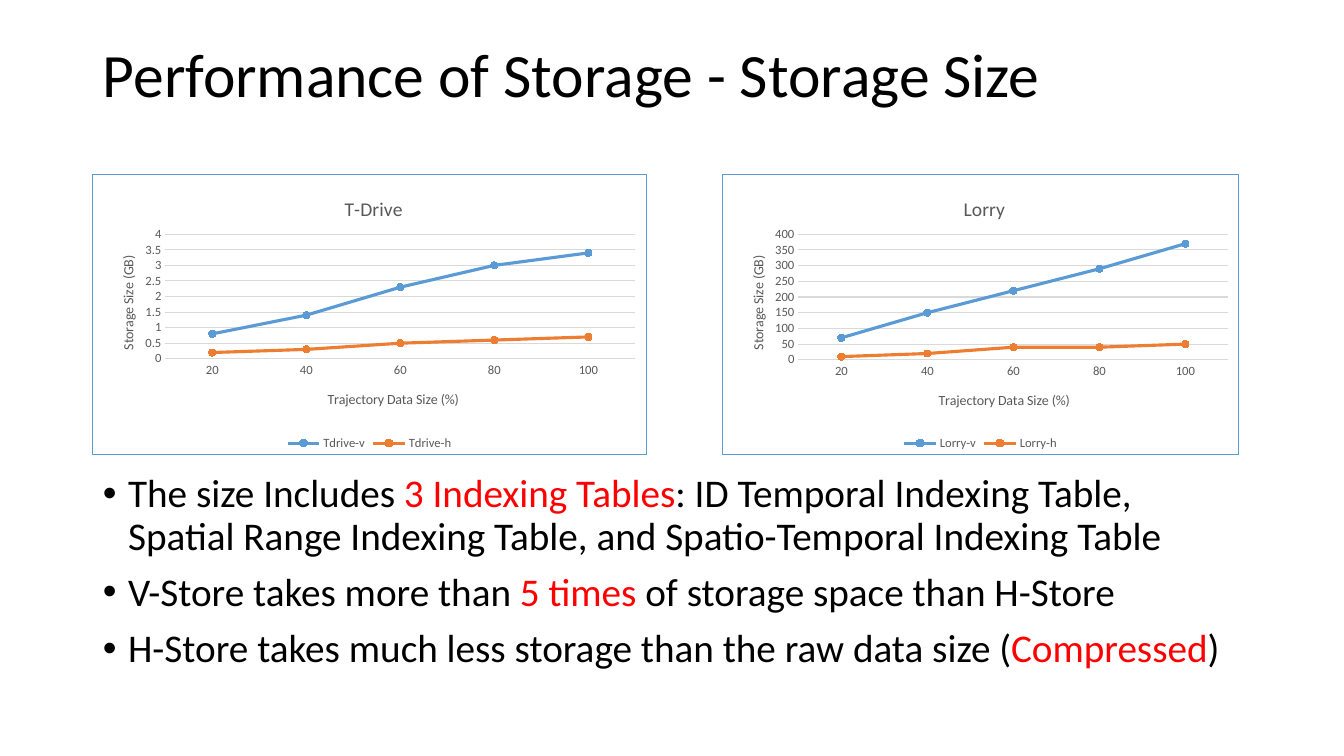
from lxml import etree
from pptx import Presentation
from pptx.chart.data import CategoryChartData
from pptx.dml.color import RGBColor
from pptx.enum.chart import XL_CHART_TYPE, XL_LEGEND_POSITION, XL_MARKER_STYLE, XL_TICK_MARK
from pptx.enum.text import MSO_ANCHOR
from pptx.oxml import parse_xml
from pptx.oxml.ns import nsdecls, qn
from pptx.util import Emu, Pt

LINE_MARKERS = XL_CHART_TYPE.LINE_MARKERS
BOTTOM = XL_LEGEND_POSITION.BOTTOM
CIRCLE = XL_MARKER_STYLE.CIRCLE
NO_TICK = XL_TICK_MARK.NONE
MIDDLE, TOP = MSO_ANCHOR.MIDDLE, MSO_ANCHOR.TOP

TITLE = "Performance of Storage - Storage Size"
BULLETS = [
    [("The size Includes ", "ink"), ("3 Indexing Tables", "accent"),
     (": ID Temporal Indexing Table, Spatial Range Indexing Table, "
      "and Spatio-Temporal Indexing Table", "ink")],
    [("V-Store takes more than ", "ink"), ("5 times ", "accent"),
     ("of storage space than H-Store", "ink")],
    [("H-Store takes much less storage than the raw data size (", "ink"),
     ("Compressed", "accent"), (")", "ink")],
]
DATA_SIZES = ["20", "40", "60", "80", "100"]
X_TITLE, Y_TITLE = "Trajectory Data Size (%)", "Storage Size (GB)"
CHARTS = [
    {"title": "T-Drive", "box": (92, 174, 555, 281), "plot": (165, 234, 471, 125),
     "title_at": (341, 191), "x_title_at": (325, 388), "y_title_at": (116, 253),
     "axis": {"minimum_scale": 0, "maximum_scale": 4, "major_unit": 0.5},
     "series": {"Tdrive-v": (0.8, 1.4, 2.3, 3, 3.4),
                "Tdrive-h": (0.2, 0.3, 0.5, 0.6, 0.7)}},
    {"title": "Lorry", "box": (722, 174, 517, 281), "plot": (798, 234, 431, 126),
     "title_at": (960, 191), "x_title_at": (936, 389), "y_title_at": (746, 253),
     "axis": {"minimum_scale": 0, "maximum_scale": 400, "major_unit": 50},
     "series": {"Lorry-v": (70, 150, 220, 290, 370),
                "Lorry-h": (10, 20, 40, 40, 50)}},
]
TITLE_BOX = (93, 13, 1159, 129)
BULLET_BOX = (93, 469, 1159, 213)
PAGE_SIZE = (1344, 756)
EMU_PER_PX = 914400 / 100.8

THEME = {
    "font": "Calibri",
    "colors": {"ink": "000000", "accent": "FF0000", "label": "595959",
               "grid": "D9D9D9", "border": "5B9BD5"},
    "series": ["5B9BD5", "ED7D31"],
    "sizes": {"title": 44, "body": 28, "chart_title": 14, "axis_title": 10, "tick": 9},
}


def px(value):
    return Emu(round(value * EMU_PER_PX))


def assign(target, values):
    for name, value in values.items():
        setattr(target, name, value)


def style_font(font, size, color):
    assign(font, {"name": THEME["font"], "size": Pt(THEME["sizes"][size]), "bold": False})
    font.color.rgb = RGBColor.from_string(THEME["colors"][color])


def style_line(line, color, width):
    line.color.rgb = RGBColor.from_string(color)
    line.width = Pt(width)


def add_text(page, box, paragraphs, size, anchor, bulleted=False):
    frame = page.shapes.add_textbox(*map(px, box)).text_frame
    assign(frame, {"word_wrap": True, "vertical_anchor": anchor})
    for index, spans in enumerate(paragraphs):
        para = frame.add_paragraph() if index else frame.paragraphs[0]
        para.line_spacing = 0.9
        if bulleted:
            para.space_before = Pt(10)
            properties = para._p.get_or_add_pPr()
            properties.set("marL", "228600")
            properties.set("indent", "-228600")
            etree.SubElement(properties, qn("a:buFont"), typeface="Arial")
            etree.SubElement(properties, qn("a:buChar"), char="•")
        for text, color in spans:
            span = para.add_run()
            span.text = text
            style_font(span.font, size, color)


def set_layout(element, chart_box, place, inner=False):
    left, top, width, height = chart_box
    for old in element.findall(qn("c:layout")):
        element.remove(old)
    layout = parse_xml(f"<c:layout {nsdecls('c')}><c:manualLayout/></c:layout>")
    entries = [("layoutTarget", "inner")] if inner else []
    entries += [("xMode", "edge"), ("yMode", "edge")]
    offsets = [(place[0] - left) / width, (place[1] - top) / height]
    extents = [place[2] / width, place[3] / height] if inner else []
    entries += zip("xywh", [f"{part:.4f}" for part in offsets + extents])
    for name, value in entries:
        etree.SubElement(layout[0], qn(f"c:{name}"), val=value)
    text = element.find(qn("c:tx"))
    if text is None:
        element.insert(0, layout)
    else:
        text.addnext(layout)


def set_title(title, text, size, chart_box, place):
    title.text_frame.text = text
    style_font(title.text_frame.paragraphs[0].runs[0].font, size, "label")
    set_layout(title._element, chart_box, place)


def add_storage_chart(page, content):
    colors, box = THEME["colors"], content["box"]
    data = CategoryChartData()
    data.categories = DATA_SIZES
    for name, values in content["series"].items():
        data.add_series(name, values)
    chart = page.shapes.add_chart(LINE_MARKERS, *map(px, box), data).chart
    style_font(chart.font, "axis_title", "ink")
    assign(chart, {"has_title": True, "has_legend": True})
    assign(chart.legend, {"position": BOTTOM, "include_in_layout": False})
    style_font(chart.legend.font, "tick", "label")
    set_title(chart.chart_title, content["title"], "chart_title", box, content["title_at"])

    for axis, text, place in [(chart.category_axis, X_TITLE, content["x_title_at"]),
                              (chart.value_axis, Y_TITLE, content["y_title_at"])]:
        assign(axis, {"major_tick_mark": NO_TICK, "minor_tick_mark": NO_TICK,
                      "has_title": True})
        style_font(axis.tick_labels.font, "tick", "label")
        set_title(axis.axis_title, text, "axis_title", box, place)
    body = chart.value_axis.axis_title.text_frame._txBody.bodyPr
    body.set("rot", "-5400000")
    body.set("vert", "horz")
    assign(chart.value_axis, content["axis"])
    style_line(chart.category_axis.format.line, colors["grid"], 0.75)
    style_line(chart.value_axis.major_gridlines.format.line, colors["grid"], 0.75)
    chart.value_axis.format.line.fill.background()

    plot = chart.plots[0]
    plot.vary_by_categories = False
    for series, color in zip(plot.series, THEME["series"]):
        series.smooth = False
        style_line(series.format.line, color, 2.25)
        assign(series.marker, {"style": CIRCLE, "size": 5})
        series.marker.format.fill.solid()
        series.marker.format.fill.fore_color.rgb = RGBColor.from_string(color)
        style_line(series.marker.format.line, color, 0.75)

    root = chart._chartSpace
    set_layout(root.chart.plotArea, box, content["plot"], inner=True)
    root.chart.addnext(parse_xml(
        f'<c:spPr {nsdecls("c", "a")}><a:noFill/><a:ln w="{Pt(0.75)}"><a:solidFill>'
        f'<a:srgbClr val="{colors["border"]}"/></a:solidFill></a:ln></c:spPr>'))


def main():
    deck = Presentation()
    deck.slide_width, deck.slide_height = map(px, PAGE_SIZE)
    page = deck.slides.add_slide(deck.slide_layouts[6])
    add_text(page, TITLE_BOX, [[(TITLE, "ink")]], "title", MIDDLE)
    add_text(page, BULLET_BOX, BULLETS, "body", TOP, bulleted=True)
    for content in CHARTS:
        add_storage_chart(page, content)
    deck.save("out.pptx")


if __name__ == "__main__":
    main()
